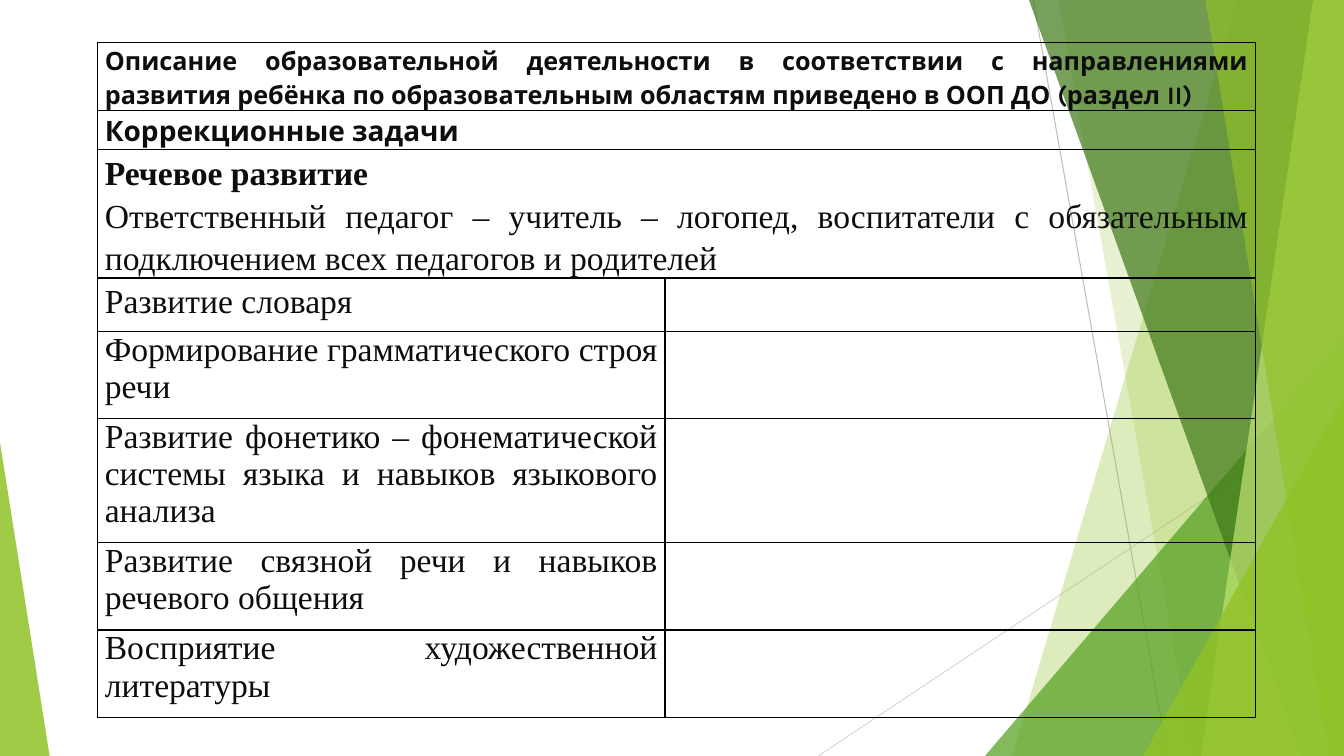
from dataclasses import dataclass

from lxml import etree
from pptx import Presentation
from pptx.dml.color import RGBColor
from pptx.enum.shapes import MSO_CONNECTOR, MSO_SHAPE
from pptx.enum.text import PP_ALIGN
from pptx.oxml.ns import qn
from pptx.util import Pt

STRAIGHT = MSO_CONNECTOR.STRAIGHT
TRIANGLE = MSO_SHAPE.ISOSCELES_TRIANGLE
JUSTIFY = PP_ALIGN.JUSTIFY


@dataclass(frozen=True)
class Theme:
    green: str = "90C226"
    leaf: str = "54A021"
    forest: str = "3F7819"
    lime: str = "C0E474"
    text: str = "0D0D0D"
    border: str = "000000"
    line_dark: str = "BFBFBF"
    line_light: str = "D9D9D9"
    heading_font: str = "Karla"
    body_font: str = "Times New Roman"
    intro_size: int = 18
    heading_size: int = 20
    body_size: int = 24
    spacing: float = 1.15


@dataclass(frozen=True)
class Box:
    left: float
    top: float
    width: float
    height: float


THEME = Theme()

# Each row: height, spans both columns, paragraphs of (text, font, size, bold, spacing)
BODY = (THEME.body_font, THEME.body_size, False)
BODY_BOLD = (THEME.body_font, THEME.body_size, True)
ROWS = [
    (48.5, True, [("Описание образовательной деятельности в соответствии с направлениями "
                   "развития ребёнка по образовательным областям приведено в ООП ДО (раздел II)",
                   THEME.heading_font, THEME.intro_size, True, THEME.spacing)]),
    (28, True, [("Коррекционные задачи",
                 THEME.heading_font, THEME.heading_size, True, THEME.spacing)]),
    (91.5, True, [("Речевое развитие", *BODY_BOLD, THEME.spacing),
                  ("Ответственный педагог – учитель – логопед, воспитатели с обязательным "
                   "подключением всех педагогов и родителей", *BODY, THEME.spacing)]),
    (38, False, [("Развитие словаря", *BODY, THEME.spacing)]),
    (62.5, False, [("Формирование грамматического строя речи", *BODY, None)]),
    (88.5, False, [("Развитие фонетико – фонематической системы языка и навыков "
                    "языкового анализа", *BODY, None)]),
    (62.5, False, [("Развитие связной речи и навыков речевого общения", *BODY, None)]),
    (62.5, False, [("Восприятие художественной литературы", *BODY, None)]),
]
COLUMN_SHARES = (0.49, 0.51)


def paint(shape, color, opacity):
    """Fill a facet with a translucent colour and no outline."""
    shape.shadow.inherit = False
    shape.line.fill.background()
    shape.fill.solid()
    shape.fill.fore_color.rgb = RGBColor.from_string(color)
    color_element = shape.fill._xPr.find(".//" + qn("a:srgbClr"))
    etree.SubElement(color_element, qn("a:alpha"), val=str(opacity * 1000))


def add_line(slide, start, end, color):
    line = slide.shapes.add_connector(STRAIGHT, *map(Pt, start + end))
    line.line.color.rgb = RGBColor.from_string(color)
    line.line.width = Pt(0.75)
    etree.SubElement(line._element.spPr, qn("a:effectLst"))


def add_band(slide, box, top_x, bottom_x, color, opacity):
    """Facet that runs from a slanted left edge to the right side of the box."""
    right, bottom = box.left + box.width, box.top + box.height
    builder = slide.shapes.build_freeform(Pt(box.left + top_x), Pt(box.top))
    corners = [(right, box.top), (right, bottom), (box.left + bottom_x, bottom)]
    builder.add_line_segments([(Pt(x), Pt(y)) for x, y in corners], close=True)
    paint(builder.convert_to_shape(), color, opacity)


def add_corner(slide, box, width, height, apex, color, opacity):
    """Right triangle in a bottom corner: apex 0 is left, 1 is right."""
    left = box.left + apex * (box.width - width)
    top = box.top + box.height - height
    triangle = slide.shapes.add_shape(TRIANGLE, Pt(left), Pt(top), Pt(width), Pt(height))
    triangle.adjustments[0] = apex
    paint(triangle, color, opacity)


def add_background(slide, box):
    # Thin crossing lines
    right, bottom = box.left + box.width, box.top + box.height
    add_line(slide, (box.left + 738, box.top), (box.left + 834, bottom), THEME.line_dark)
    add_line(slide, (right, box.top + 290), (box.left + 584.5, bottom), THEME.line_light)

    # Overlapping facets, back to front
    add_band(slide, box, 884, 723, THEME.green, 30)
    add_band(slide, box, 756, 852, THEME.green, 20)
    add_corner(slide, box, 256.5, 300, 1, THEME.leaf, 72)
    add_band(slide, box, 735, 929.5, THEME.forest, 70)
    add_band(slide, box, 938, 858, THEME.lime, 70)
    add_band(slide, box, 861, 949, THEME.green, 65)
    add_corner(slide, box, 143.5, 257, 1, THEME.green, 80)
    add_corner(slide, box, 35.5, 224, 0, THEME.green, 85)


def style_cell(cell):
    """Clear the fill, tighten the margins and draw a border on every side."""
    cell.margin_left = cell.margin_right = Pt(5.4)
    cell.margin_top = cell.margin_bottom = 0
    properties = cell._tc.get_or_add_tcPr()
    for side in ("a:lnL", "a:lnR", "a:lnT", "a:lnB"):
        border = etree.SubElement(properties, qn(side), w=str(Pt(1)))
        fill = etree.SubElement(border, qn("a:solidFill"))
        etree.SubElement(fill, qn("a:srgbClr"), val=THEME.border)
    cell.fill.background()


def write_cell(cell, paragraphs):
    text_frame = cell.text_frame
    for index, (text, font, size, bold, spacing) in enumerate(paragraphs):
        paragraph = text_frame.add_paragraph() if index else text_frame.paragraphs[0]
        paragraph.text = text
        paragraph.alignment = JUSTIFY
        paragraph.line_spacing = spacing
        paragraph.font.name = font
        paragraph.font.size = Pt(size)
        paragraph.font.bold = bold
        paragraph.font.color.rgb = RGBColor.from_string(THEME.text)


def add_task_table(slide, box):
    frame = slide.shapes.add_table(len(ROWS), len(COLUMN_SHARES), Pt(box.left),
                                   Pt(box.top), Pt(box.width), Pt(box.height))
    table = frame.table
    table.first_row = table.horz_banding = False
    for column, share in zip(table.columns, COLUMN_SHARES):
        column.width = Pt(box.width * share)

    # Row heights keep their proportions inside the box
    scale = box.height / sum(height for height, _, _ in ROWS)
    for index, (height, spans, paragraphs) in enumerate(ROWS):
        table.rows[index].height = Pt(height * scale)
        first, last = table.cell(index, 0), table.cell(index, 1)
        style_cell(first)
        style_cell(last)
        if spans:
            first.merge(last)
        write_cell(first, paragraphs)


def main():
    presentation = Presentation()
    presentation.slide_width, presentation.slide_height = Pt(960), Pt(540)
    slide = presentation.slides.add_slide(presentation.slide_layouts[6])
    add_background(slide, Box(0, 0, 960, 540))
    add_task_table(slide, Box(69.5, 30.5, 827.5, 482))
    presentation.save("out.pptx")


if __name__ == "__main__":
    main()
